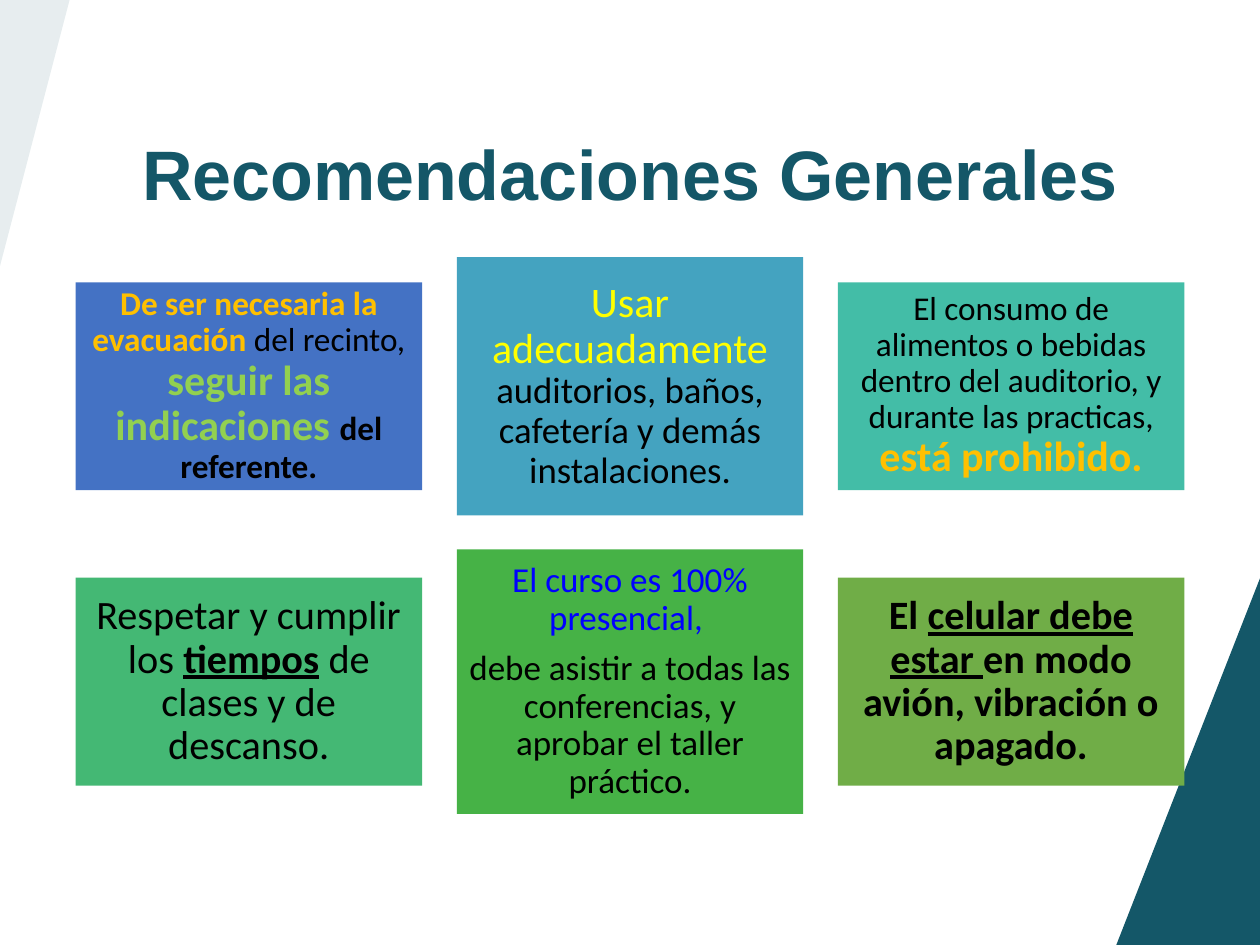
"""Build the slide of general recommendations as a grid of six cards."""
from lxml.etree import SubElement
from pptx import Presentation
from pptx.dml.color import RGBColor
from pptx.enum.shapes import MSO_SHAPE as Shape
from pptx.enum.text import MSO_ANCHOR as Anchor, PP_ALIGN as Align
from pptx.oxml.ns import qn
from pptx.util import Inches, Pt

TEAL = RGBColor(0x14, 0x57, 0x68)
BLACK = RGBColor(0, 0, 0)
AMBER = RGBColor(0xFF, 0xC0, 0x00)
LIME = RGBColor(0x92, 0xD0, 0x50)
YELLOW = RGBColor(0xFF, 0xFF, 0x00)
BLUE = RGBColor(0, 0, 0xFF)
ROYAL = RGBColor(0x44, 0x72, 0xC4)
SKY = RGBColor(0x44, 0xA3, 0xC0)
TURQUOISE = RGBColor(0x43, 0xBD, 0xA7)
JADE = RGBColor(0x44, 0xB8, 0x74)
GREEN = RGBColor(0x46, 0xB2, 0x46)
OLIVE = RGBColor(0x70, 0xAD, 0x47)

TITLE = [[("Recomendaciones Generales", 40, TEAL, "b")]]
CARDS = [
    (ROYAL, 1.65, 0.08, [[
        ("De ser necesaria la evacuación ", 19, AMBER, "b"),
        ("del recinto, ", 19, BLACK, ""),
        ("seguir las indicaciones ", 24, LIME, "b"),
        ("del referente.", 19, BLACK, "b")]]),
    (SKY, 2.05, 0.1, [[
        ("Usar adecuadamente ", 24, YELLOW, ""),
        ("auditorios, baños, cafetería y demás instalaciones.", 21, BLACK, "")]]),
    (TURQUOISE, 1.65, 0.08, [[
        ("El consumo de alimentos o bebidas dentro del auditorio, "
         "y durante las practicas, ", 19, BLACK, ""),
        ("está prohibido.", 24, AMBER, "b")]]),
    (JADE, 1.65, 0.1, [[
        ("Respetar y cumplir los ", 23, BLACK, ""),
        ("tiempos", 23, BLACK, "bu"),
        (" de clases y de descanso.", 23, BLACK, "")]]),
    (GREEN, 2.1, 0.08, [
        [("El curso es 100% presencial, ", 20, BLUE, "")],
        [("debe asistir a todas las conferencias, "
          "y aprobar el taller práctico.", 20, BLACK, "")]]),
    (OLIVE, 1.65, 0.1, [[
        ("El ", 23, BLACK, "b"),
        ("celular debe estar ", 23, BLACK, "bu"),
        ("en modo avión, vibración o apagado.", 23, BLACK, "b")]]),
]
CORNERS = [
    ([(8.86, 7.5), (10, 4.59), (10, 7.5)], 100),
    ([(-0.01, -0.03), (0.56, -0.03), (-0.01, 2.15)], 10),
]
COLUMNS, LEFT, PITCH, CARD_WIDTH = 3, 0.6, 3.025, 2.75
ROW_CENTERS = [3.065, 5.41]


def paint(shape, color):
    shape.shadow.inherit = False
    shape.fill.solid()
    shape.fill.fore_color.rgb = color
    shape.line.fill.background()


def add_corner(slide, points, opacity):
    start, *others = [(Inches(x), Inches(y)) for x, y in points]
    builder = slide.shapes.build_freeform(*start)
    builder.add_line_segments(others)
    corner = builder.convert_to_shape()
    paint(corner, TEAL)
    if opacity < 100:
        color = corner.fill._xPr.find(".//" + qn("a:srgbClr"))
        SubElement(color, qn("a:alpha"), val=str(opacity * 1000))


def write(frame, paragraphs, font, inset):
    frame.word_wrap = True
    frame.vertical_anchor = Anchor.MIDDLE
    frame.margin_left = frame.margin_right = Inches(inset)
    frame.margin_top = frame.margin_bottom = Inches(inset)
    for index, runs in enumerate(paragraphs):
        paragraph = frame.add_paragraph() if index else frame.paragraphs[0]
        paragraph.alignment = Align.CENTER
        paragraph.line_spacing = 0.9
        if index < len(paragraphs) - 1:
            paragraph.space_after = Pt(7)
        for text, size, color, style in runs:
            run = paragraph.add_run()
            run.text = text
            run.font.name = font
            run.font.size = Pt(size)
            run.font.color.rgb = color
            run.font.bold = "b" in style
            run.font.underline = "u" in style


def add_card(slide, index, color, height, inset, paragraphs):
    row, column = divmod(index, COLUMNS)
    card = slide.shapes.add_shape(
        Shape.RECTANGLE, Inches(LEFT + column * PITCH),
        Inches(ROW_CENTERS[row] - height / 2),
        Inches(CARD_WIDTH), Inches(height))
    paint(card, color)
    write(card.text_frame, paragraphs, "Calibri", inset)


def main():
    deck = Presentation()
    deck.slide_width, deck.slide_height = Inches(10), Inches(7.5)
    slide = deck.slides.add_slide(deck.slide_layouts[6])
    for points, opacity in CORNERS:
        add_corner(slide, points, opacity)
    for index, card in enumerate(CARDS):
        add_card(slide, index, *card)
    title = slide.shapes.add_textbox(
        Inches(0.4), Inches(1.1), Inches(9.2), Inches(0.63))
    write(title.text_frame, TITLE, "Arial", 0.05)
    deck.save("out.pptx")


if __name__ == "__main__":
    main()
